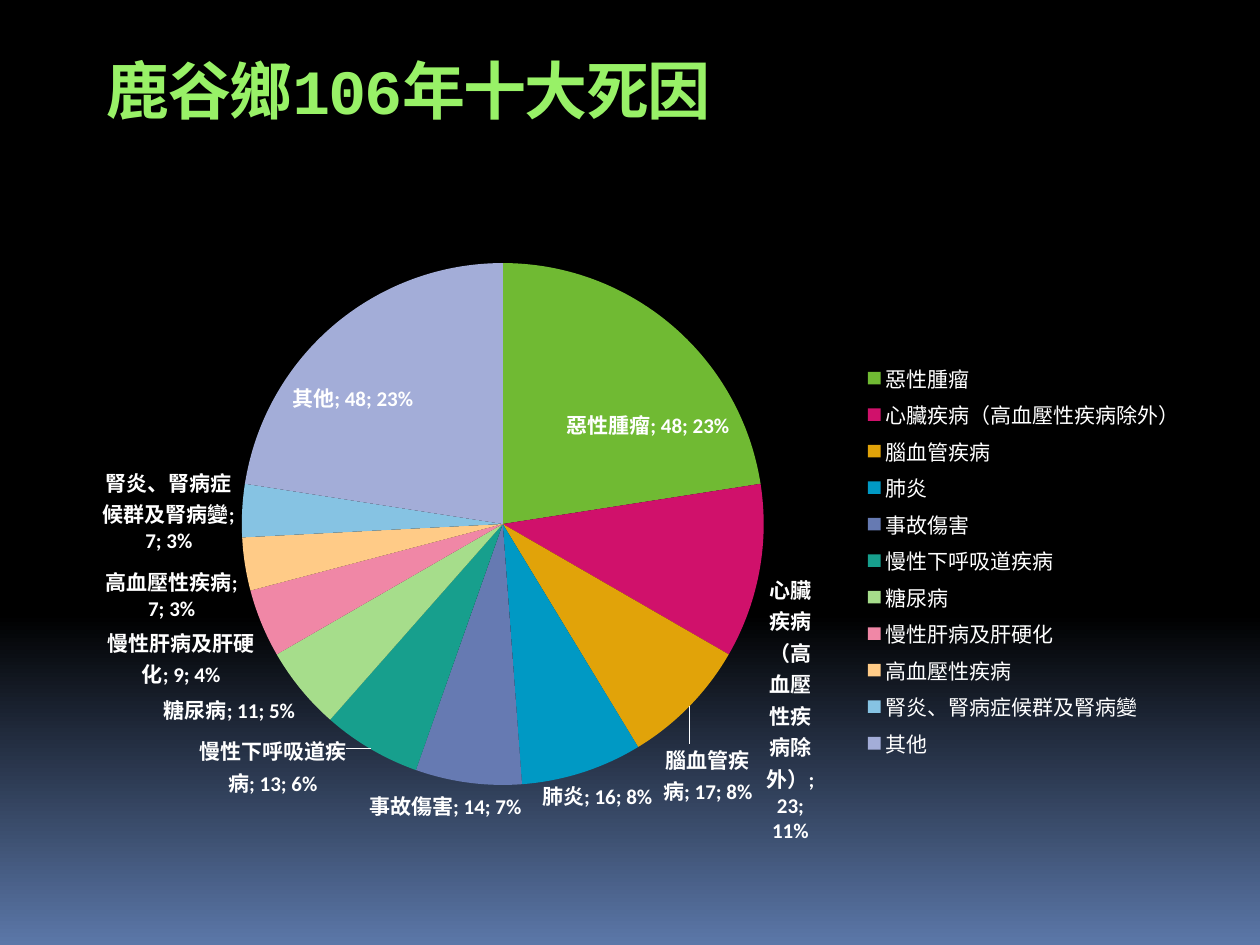
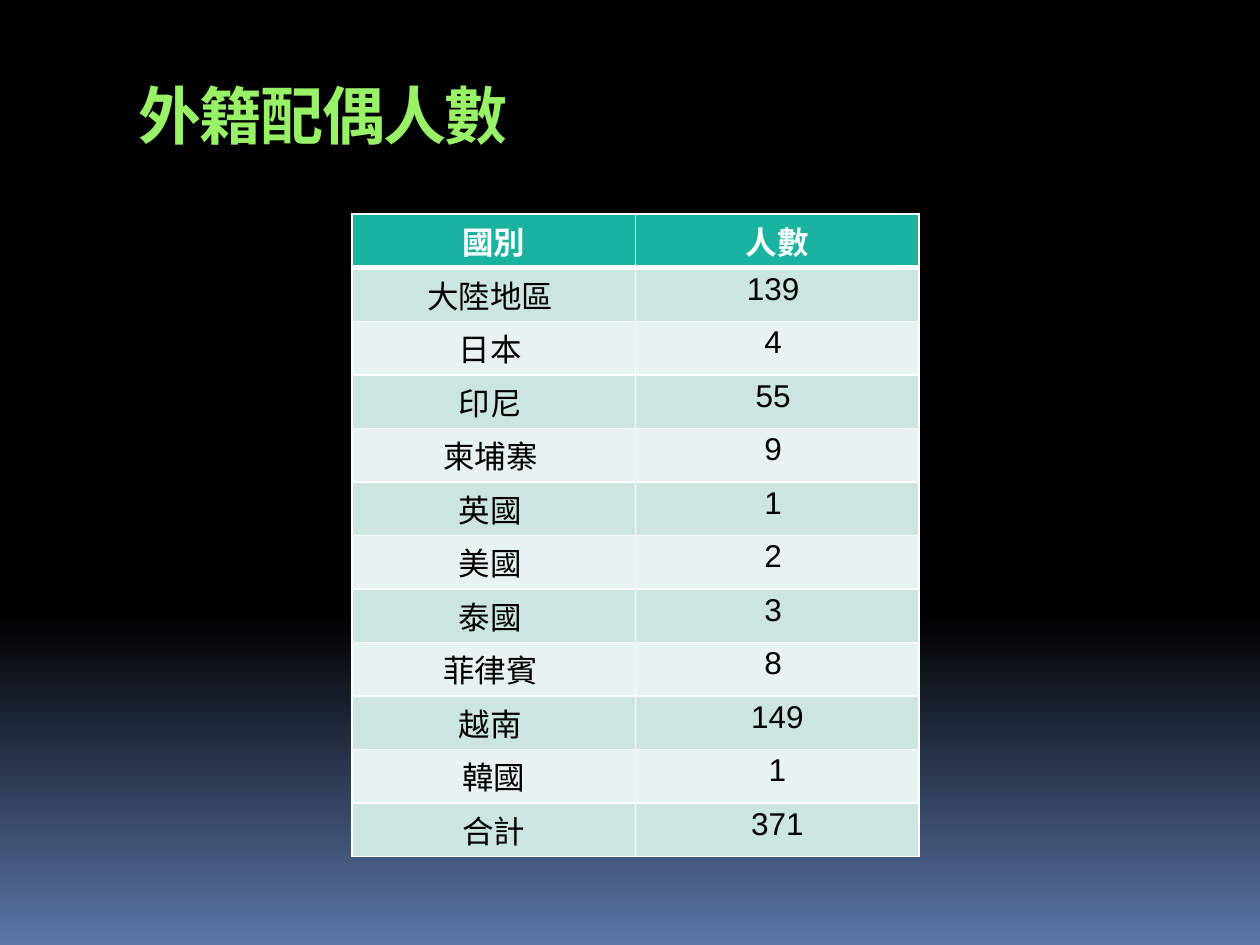
from copy import deepcopy

from lxml import etree
from pptx import Presentation
from pptx.chart.data import CategoryChartData
from pptx.dml.color import RGBColor
from pptx.enum.chart import XL_CHART_TYPE, XL_LABEL_POSITION, XL_LEGEND_POSITION
from pptx.enum.text import MSO_ANCHOR, PP_ALIGN
from pptx.oxml import parse_xml
from pptx.oxml.ns import qn
from pptx.util import Inches, Pt

PIE = XL_CHART_TYPE.PIE
RIGHT = XL_LEGEND_POSITION.RIGHT
BEST = XL_LABEL_POSITION.BEST_FIT
CENTER = PP_ALIGN.CENTER
TOP = MSO_ANCHOR.TOP
COLS, ROWS = 100, 75
A_NS = "http://schemas.openxmlformats.org/drawingml/2006/main"

BLACK, WHITE = "000000", "FFFFFF"
DUSK, LIME, TEAL = "5B77A8", "98F167", "1AB39F"
BANDS = ("CDE5DF", "E8F2F0")
SKY = ((0, BLACK), (0.65, BLACK), (1, DUSK))

CAUSES = (
    ("惡性腫瘤", 48, "70BA33"),
    ("心臟疾病（高血壓性疾病除外）", 23, "D0116B"),
    ("腦血管疾病", 17, "E1A309"),
    ("肺炎", 16, "0099C4"),
    ("事故傷害", 14, "667AB2"),
    ("慢性下呼吸道疾病", 13, "179F8D"),
    ("糖尿病", 11, "A6DD8B"),
    ("慢性肝病及肝硬化", 9, "F087A6"),
    ("高血壓性疾病", 7, "FFCB87"),
    ("腎炎、腎病症候群及腎病變", 7, "86C3E3"),
    ("其他", 48, "A3ADD8"),
)
SPOUSES = (
    ("國別", "人數"),
    ("大陸地區 ", "139 "),
    ("日本 ", "4 "),
    ("印尼 ", "55 "),
    ("柬埔寨 ", "9 "),
    ("英國 ", "1 "),
    ("美國 ", "2 "),
    ("泰國 ", "3 "),
    ("菲律賓 ", "8 "),
    ("越南 ", "149"),
    ("韓國", "1"),
    ("合計", "371"),
)


def color(code):
    return RGBColor.from_string(code)


class Deck:
    def __init__(self):
        self.prs = Presentation()
        self.prs.slide_width = Inches(10)
        self.prs.slide_height = Inches(7.5)
        self.slide = None
        self.paint()

    def paint(self):
        fill = self.prs.slide_master.background.fill
        fill.gradient()
        fill.gradient_angle = 270
        first = fill.gradient_stops[0]
        stops = first._gs.getparent()
        stops.append(deepcopy(first._gs))
        for stop, (place, code) in zip(fill.gradient_stops, SKY):
            stop.position = place
            stop.color.rgb = color(code)

    def page(self):
        self.slide = self.prs.slides.add_slide(self.prs.slide_layouts[6])

    def area(self, left, top, width, height):
        col = self.prs.slide_width / COLS
        row = self.prs.slide_height / ROWS
        return [round(n) for n in (left * col, top * row, width * col, height * row)]

    def style(self, font, name, size, code, bold=False):
        font.name = name
        font.size = Pt(size)
        font.bold = bold
        font.color.rgb = color(code)

    def title(self, text, *spot):
        frame = self.slide.shapes.add_textbox(*self.area(*spot)).text_frame
        frame.word_wrap = True
        frame.vertical_anchor = TOP
        run = frame.paragraphs[0].add_run()
        run.text = text
        self.style(run.font, "Courier New", 36, LIME, True)
        run._r.get_or_add_rPr().set("spc", "-100")

    def pie(self, parts, *spot):
        names, counts, codes = zip(*parts)
        data = CategoryChartData()
        data.categories = names
        data.add_series("Series 1", counts)
        chart = self.slide.shapes.add_chart(PIE, *self.area(*spot), data).chart
        self.style(chart.font, "Calibri", 10, WHITE)
        chart.has_title = False
        chart.has_legend = True
        chart.legend.position = RIGHT
        chart.legend.include_in_layout = False
        self.style(chart.legend.font, "Calibri", 12, WHITE)
        plot = chart.plots[0]
        plot.vary_by_categories = True
        for order, code in enumerate(codes):
            fill = plot.series[0].points[order].format.fill
            fill.solid()
            fill.fore_color.rgb = color(code)
        self.label(plot.series[0].data_labels)

    def label(self, labels):
        labels.show_category_name = True
        labels.show_value = True
        labels.show_percentage = True
        labels.position = BEST
        self.style(labels.font, "Calibri", 12, WHITE, True)
        root = labels._element
        lead = root.find(qn("c:showLeaderLines"))
        if lead is None:
            lead = etree.SubElement(root, qn("c:showLeaderLines"))
        lead.set("val", "1")
        mark = etree.Element(qn("c:separator"))
        mark.text = "; "
        lead.addprevious(mark)

    def table(self, lines, *spot):
        shape = self.slide.shapes.add_table(len(lines), len(lines[0]), *self.area(*spot))
        for row, line in enumerate(lines):
            for col, text in enumerate(line):
                self.cell(shape.table.cell(row, col), text, row)

    def cell(self, cell, text, row):
        head = row == 0
        cell.margin_left = cell.margin_right = Inches(0.03)
        cell.margin_top = cell.margin_bottom = Inches(0.03)
        cell.vertical_anchor = TOP
        cell.fill.solid()
        cell.fill.fore_color.rgb = color(TEAL if head else BANDS[(row - 1) % 2])
        para = cell.text_frame.paragraphs[0]
        para.alignment = CENTER
        run = para.add_run()
        run.text = text
        self.style(run.font, "Arial", 18, WHITE if head else BLACK, head)
        wide = {"T": 3 if row == 1 else 1, "B": 3 if head else 1}
        for place, side in enumerate("LRTB"):
            width = Pt(wide.get(side, 1))
            edge = parse_xml(
                f'<a:ln{side} xmlns:a="{A_NS}" w="{width}"><a:solidFill>'
                f'<a:srgbClr val="{WHITE}"/></a:solidFill></a:ln{side}>'
            )
            cell._tc.get_or_add_tcPr().insert(place, edge)


def main():
    deck = Deck()
    deck.page()
    deck.title("鹿谷鄉106年十大死因", 7.5, 3.6, 63, 10.9)
    deck.pie(CAUSES, 4.7, 19.5, 90.3, 50)
    deck.page()
    deck.title("外籍配偶人數", 10, 5.6, 85, 10)
    deck.table(SPOUSES, 27.95, 17, 45, 51)
    deck.prs.save("out.pptx")


if __name__ == "__main__":
    main()
